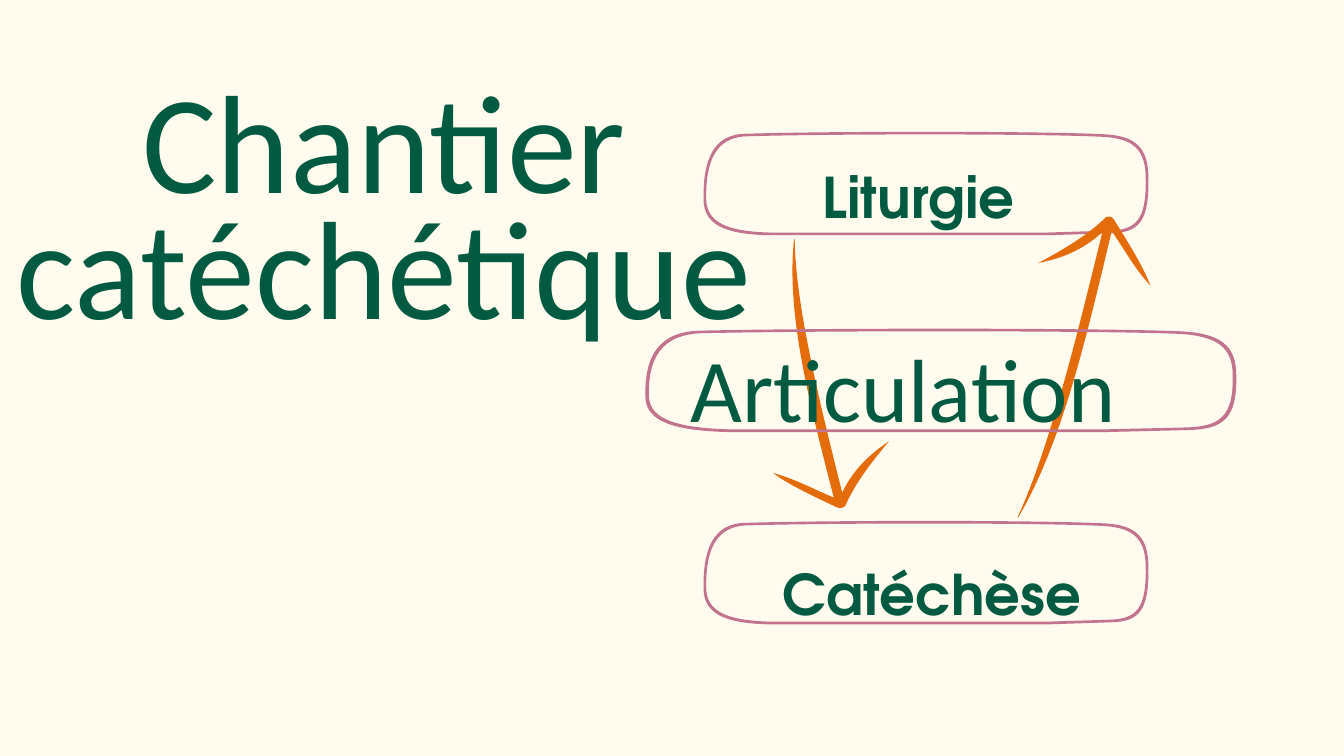
"""Build the slide on how liturgy and catechesis connect."""
from dataclasses import dataclass

from lxml.etree import SubElement
from pptx import Presentation
from pptx.dml.color import RGBColor
from pptx.enum.text import MSO_ANCHOR, MSO_AUTO_SIZE, PP_ALIGN as Align
from pptx.oxml.ns import qn
from pptx.util import Inches, Pt


@dataclass(frozen=True)
class Theme:
    """Colours, fonts and type sizes."""
    paper: str = "FFFBEF"
    ink: str = "025A40"
    frame: str = "C2738D"
    arrow: str = "E46C0A"
    plain_font: str = "Calibri"
    label_font: str = "TeX Gyre Adventor"
    title_size: float = 149.9
    link_size: float = 96
    label_size: float = 60


THEME = Theme()
TITLE = ("Chantier catéchétique", (-0.56, 1.38, 12.55, 3.78))
LINK = ("Articulation", (10.18, 4.9, 7.16, 1.72))
LABELS = [
    ("Catéchèse", (10.95, 7.93, 5.97, 1.41), 0.14),
    ("Liturgie", (10.81, 2.02, 5.97, 1.41), 0.25),
]
END_FRAMES = [(10.46, 7.74, 6.64, 1.55), (10.46, 1.95, 6.64, 1.55)]
LINK_FRAME = (9.59, 4.88, 8.82, 1.55)
ARROWS = [((15.05, 3.13, 1.7, 4.69), 15.4), ((11.21, 3.54, 1.79, 4.07), 168)]

FRAME_SIZE, FRAME_STROKE = (6.64, 1.55), 0.04
FRAME_OUTLINE = [
    (5.17, 1.55), (3.5, 1.55), (2.3, 1.55), (0.95, 1.55),
    (0.34, 1.53), (0.02, 1.4), (0.01, 1.03),
    (0, 0.45), (0.14, 0.04), (0.65, 0.04),
    (2, 0), (5.1, 0), (6.01, 0.05),
    (6.44, 0.08), (6.63, 0.25), (6.63, 0.7),
    (6.64, 1.35), (6.49, 1.51), (6.08, 1.52),
    (5.8, 1.53), (5.45, 1.54), (5.17, 1.55),
]
ARROW_SIZE = (1.7, 4.69)
ARROW_OUTLINE = [
    (0.71, 4.69), (0.89, 3.61), (0.85, 1.96), (0.8, 0.26),
    (0.65, 0.51), (0.41, 0.76), (0, 0.96),
    (0.33, 0.65), (0.61, 0.35), (0.79, 0.04),
    (0.82, 0), (0.88, 0), (0.92, 0.04),
    (1.2, 0.3), (1.51, 0.58), (1.7, 0.84),
    (1.42, 0.67), (1.19, 0.43), (0.93, 0.21),
    (0.99, 1.92), (1.05, 3.46), (0.72, 4.69),
]


def inset(points, size, gap):
    """Shrink an outline towards its centre by a gap on every side."""
    return [tuple(gap + value * (1 - 2 * gap / side) for value, side in zip(point, size))
            for point in points]


def add_outline(page, contours, size, at, color, rotation=0):
    """Stretch closed curves into a box: a start point, then three points per curve."""
    left, top, width, height = at
    contours = [[(Inches(left + x * width / size[0]), Inches(top + y * height / size[1]))
                 for x, y in points] for points in contours]
    builder = page.shapes.build_freeform(*contours[0][0])
    for number, (start, *points) in enumerate(contours):
        if number:
            builder.move_to(*start)
        builder.add_line_segments(points, close=True)
    shape = builder.convert_to_shape()
    lines = list(shape.element.iter(qn("a:lnTo")))
    for first in range(0, len(lines), 3):
        curve = SubElement(lines[first].getparent(), qn("a:cubicBezTo"))
        lines[first].addprevious(curve)
        for line in lines[first:first + 3]:
            curve.append(line[0])
            line.getparent().remove(line)
    shape.shadow.inherit = False
    shape.fill.solid()
    shape.fill.fore_color.rgb = RGBColor.from_string(color)
    shape.line.fill.background()
    shape.rotation = rotation


def add_frame(page, at):
    """Draw the hand-drawn frame as a thin ring."""
    ring = [FRAME_OUTLINE, inset(FRAME_OUTLINE, FRAME_SIZE, FRAME_STROKE)]
    add_outline(page, ring, FRAME_SIZE, at, THEME.frame)


def write(box, text, *, at, size, font, bold=False, align=Align.CENTER,
          spacing=1.0, insets=(0, 0, 0, 0)):
    """Place a text box and fill it with one formatted paragraph."""
    box.left, box.top, box.width, box.height = map(Inches, at)
    frame = box.text_frame
    frame.word_wrap = True
    frame.auto_size = MSO_AUTO_SIZE.SHAPE_TO_FIT_TEXT
    frame.vertical_anchor = MSO_ANCHOR.TOP
    (frame.margin_left, frame.margin_top,
     frame.margin_right, frame.margin_bottom) = map(Inches, insets)
    para = frame.paragraphs[0]
    para.alignment, para.line_spacing, para.space_before = align, spacing, Pt(0)
    span = para.add_run()
    span.text = text
    span.font.name, span.font.size, span.font.bold = font, Pt(size), bold
    span.font.color.rgb = RGBColor.from_string(THEME.ink)


def main():
    """Build and save the deck."""
    deck = Presentation()
    deck.slide_width, deck.slide_height = Inches(20), Inches(11.25)
    page = deck.slides.add_slide(deck.slide_layouts[5])
    page.background.fill.solid()
    page.background.fill.fore_color.rgb = RGBColor.from_string(THEME.paper)

    write(page.shapes.title, TITLE[0], at=TITLE[1], size=THEME.title_size,
          font=THEME.plain_font, spacing=0.75)
    for place, (text, at, right) in zip(END_FRAMES, LABELS):
        add_frame(page, place)
        write(page.shapes.add_textbox(0, 0, 0, 0), text, at=at, bold=True, spacing=1.4,
              size=THEME.label_size, font=THEME.label_font, insets=(0, 0, right, 0))
    for place, angle in ARROWS:
        add_outline(page, [ARROW_OUTLINE], ARROW_SIZE, place, THEME.arrow, angle)
    add_frame(page, LINK_FRAME)
    write(page.shapes.add_textbox(0, 0, 0, 0), LINK[0], at=LINK[1], size=THEME.link_size,
          font=THEME.plain_font, align=Align.LEFT, insets=(0.1, 0.05, 0.1, 0.05))
    deck.save("out.pptx")


if __name__ == "__main__":
    main()
